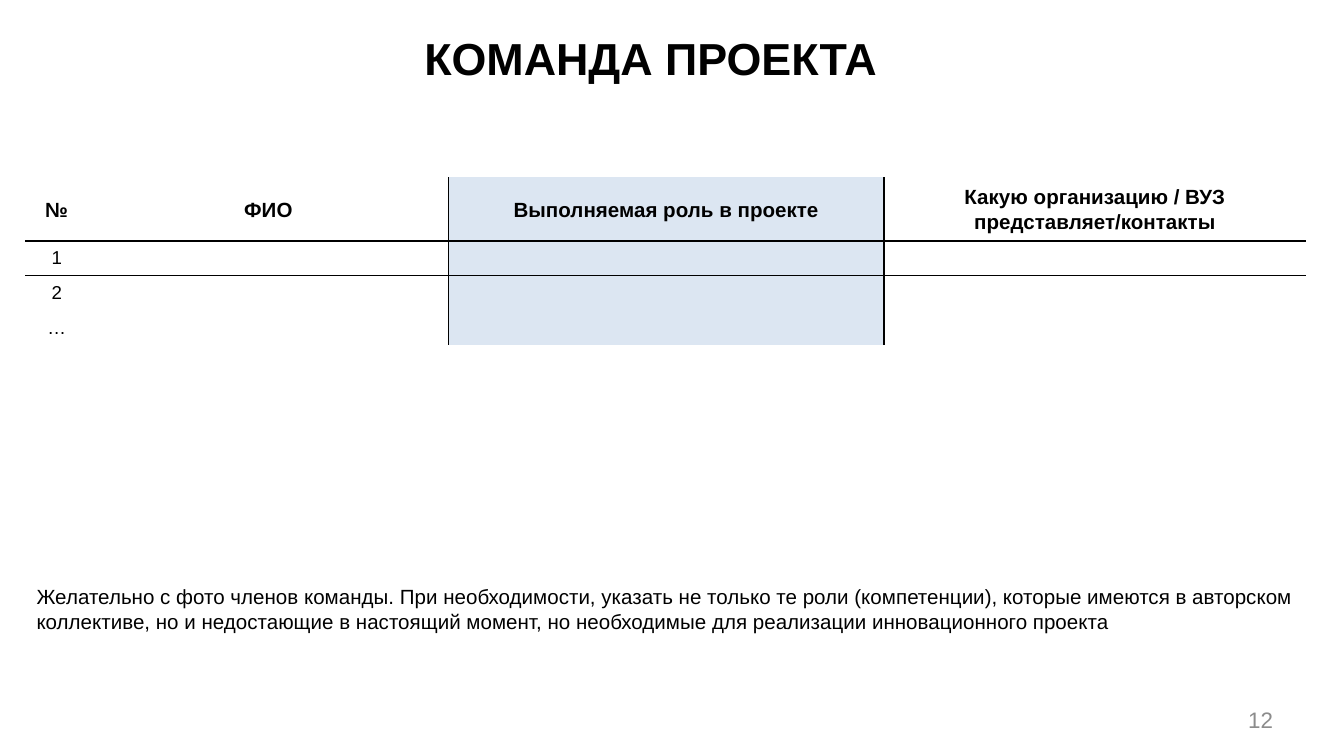
from lxml import etree
from pptx import Presentation
from pptx.dml.color import RGBColor
from pptx.enum import text
from pptx.oxml import ns
from pptx.util import Pt

HEADS = ["№", "ФИО", "Выполняемая роль в проекте",
         "Какую организацию / ВУЗ представляет/контакты"]
MARKS = ["1", "2", "…"]
NOTE = ("Желательно с фото членов команды. При необходимости, указать не только те роли "
        "(компетенции), которые имеются в авторском коллективе, но и недостающие в настоящий "
        "момент, но необходимые для реализации инновационного проекта")
LEFT, MID, RIGHT = text.PP_ALIGN.LEFT, text.PP_ALIGN.CENTER, text.PP_ALIGN.RIGHT
TOP, CENTER, BOTTOM = (text.MSO_ANCHOR.TOP, text.MSO_ANCHOR.MIDDLE,
                       text.MSO_ANCHOR.BOTTOM)


def color(code):
    """Turn a hex string into a colour."""
    return RGBColor.from_string(code)


def style(para, size, align, bold=False, ink="000000"):
    """Set the font and alignment of a paragraph."""
    para.alignment = align
    font = para.font
    font.name, font.size, font.bold = "Arial", Pt(size), bold
    font.color.rgb = color(ink)


def label(slide, box, words, size, align, anchor, bold=False, ink="000000", pad=(7.2, 3.6)):
    """Place a text box with one paragraph."""
    frame = slide.shapes.add_textbox(*map(Pt, box)).text_frame
    frame.word_wrap = True
    frame.vertical_anchor = anchor
    frame.margin_left = frame.margin_right = Pt(pad[0])
    frame.margin_top = frame.margin_bottom = Pt(pad[1])
    para = frame.paragraphs[0]
    para.text = words
    style(para, size, align, bold, ink)


def border(cell, sides):
    """Draw black lines on the named sides of a cell and clear the others."""
    props = cell._tc.get_or_add_tcPr()
    for side in "LRTB":
        line = etree.SubElement(props, ns.qn(f"a:ln{side}"), w=str(Pt(1)))
        if side in sides:
            fill = etree.SubElement(line, ns.qn("a:solidFill"))
            etree.SubElement(fill, ns.qn("a:srgbClr"), val="000000")
        else:
            etree.SubElement(line, ns.qn("a:noFill"))


def fill_cell(cell, words, row, col):
    """Write and paint one cell of the team table."""
    head = row == 0
    cell.margin_left = cell.margin_right = Pt(7.2)
    cell.margin_top = cell.margin_bottom = Pt(2.9)
    cell.vertical_anchor = CENTER if head else TOP
    para = cell.text_frame.paragraphs[0]
    para.text = words
    para.line_spacing = 1.07
    style(para, 11 if head else 10, MID, head)
    if not words:
        etree.SubElement(para._p, ns.qn("a:endParaRPr"), sz="1000")
    rules = {"L": col >= 2, "R": col in (1, 2), "T": row in (1, 2), "B": row in (0, 1)}
    border(cell, [side for side, drawn in rules.items() if drawn])
    if col == 2:
        cell.fill.solid()
        cell.fill.fore_color.rgb = color("DCE6F2")
    else:
        cell.fill.background()


def team(slide, box):
    """Build the table of team members."""
    rows = [HEADS] + [[mark, "", "", ""] for mark in MARKS]
    table = slide.shapes.add_table(len(rows), len(HEADS), *map(Pt, box)).table
    table.first_row = table.horz_banding = False
    for col, wide in zip(table.columns, (33.8, 193, 233.3, 226.1)):
        col.width = Pt(wide)
    for row, words in enumerate(rows):
        table.rows[row].height = Pt(18.4 if row else 33.2)
        for col, word in enumerate(words):
            fill_cell(table.cell(row, col), word, row, col)


def main():
    """Build and save the slide."""
    deck = Presentation()
    deck.slide_width, deck.slide_height = Pt(720), Pt(405)
    slide = deck.slides.add_slide(deck.slide_layouts[6])
    label(slide, (632.2, 372.5, 56.9, 26), "12", 12, RIGHT, CENTER, ink="8C8C8C")
    team(slide, (13.5, 95, 686.2, 88.4))
    label(slide, (14.4, 310.5, 686.2, 32.4), NOTE, 11, LEFT, TOP, pad=(5.2, 2.6))
    label(slide, (110.2, 7.2, 476.6, 41.8), "КОМАНДА ПРОЕКТА", 24, MID, BOTTOM, bold=True)
    deck.save("out.pptx")


if __name__ == "__main__":
    main()
